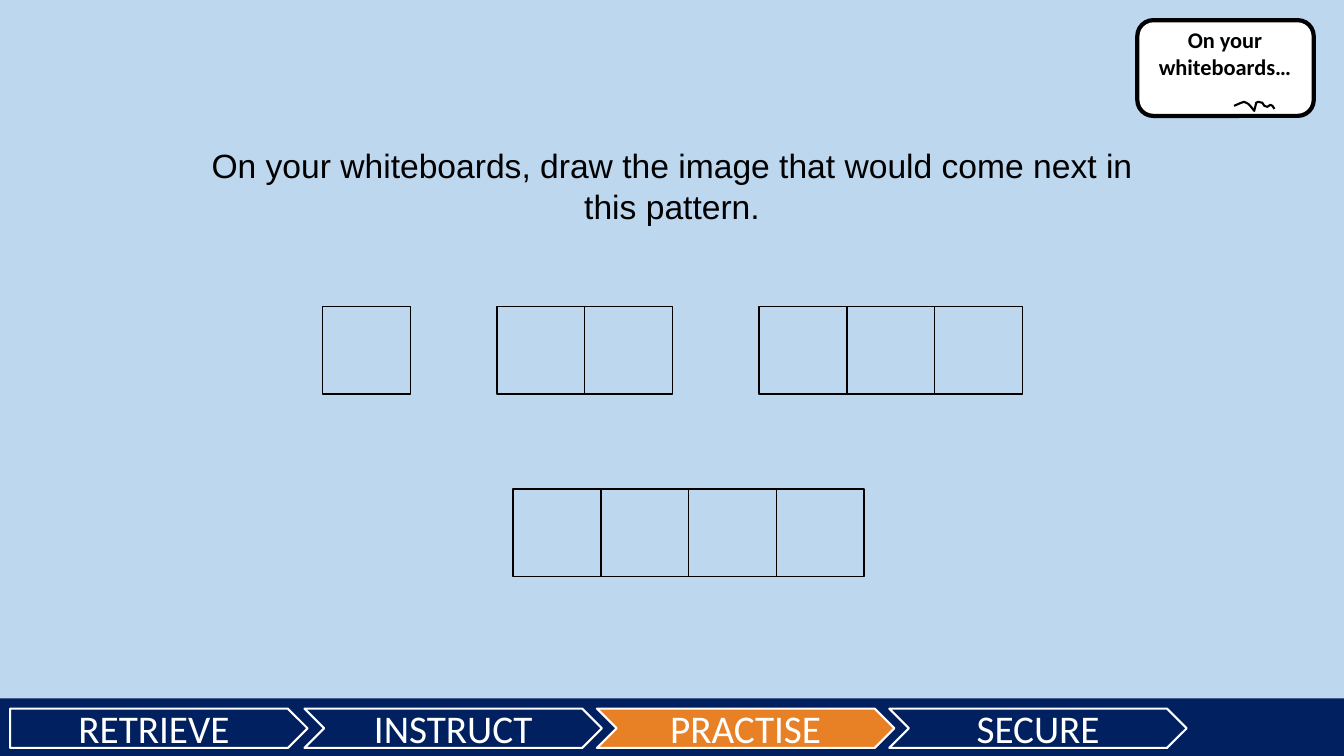
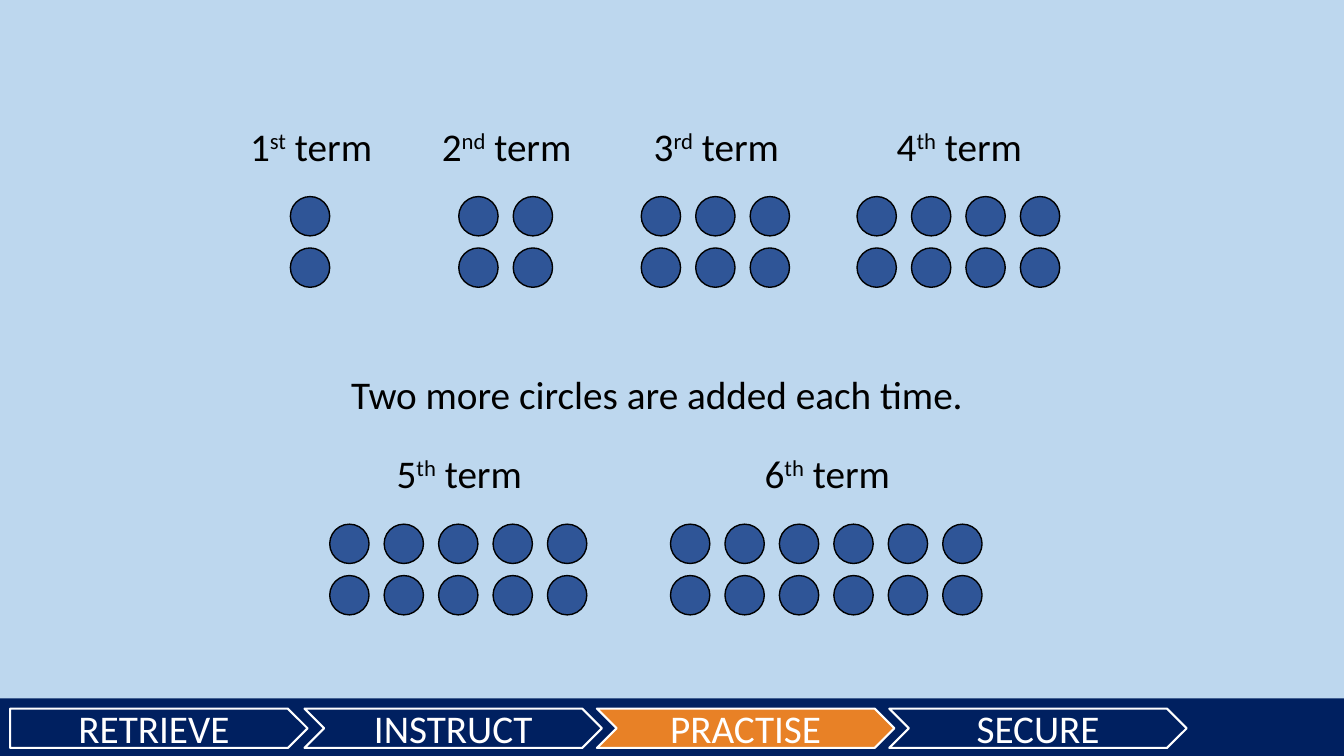
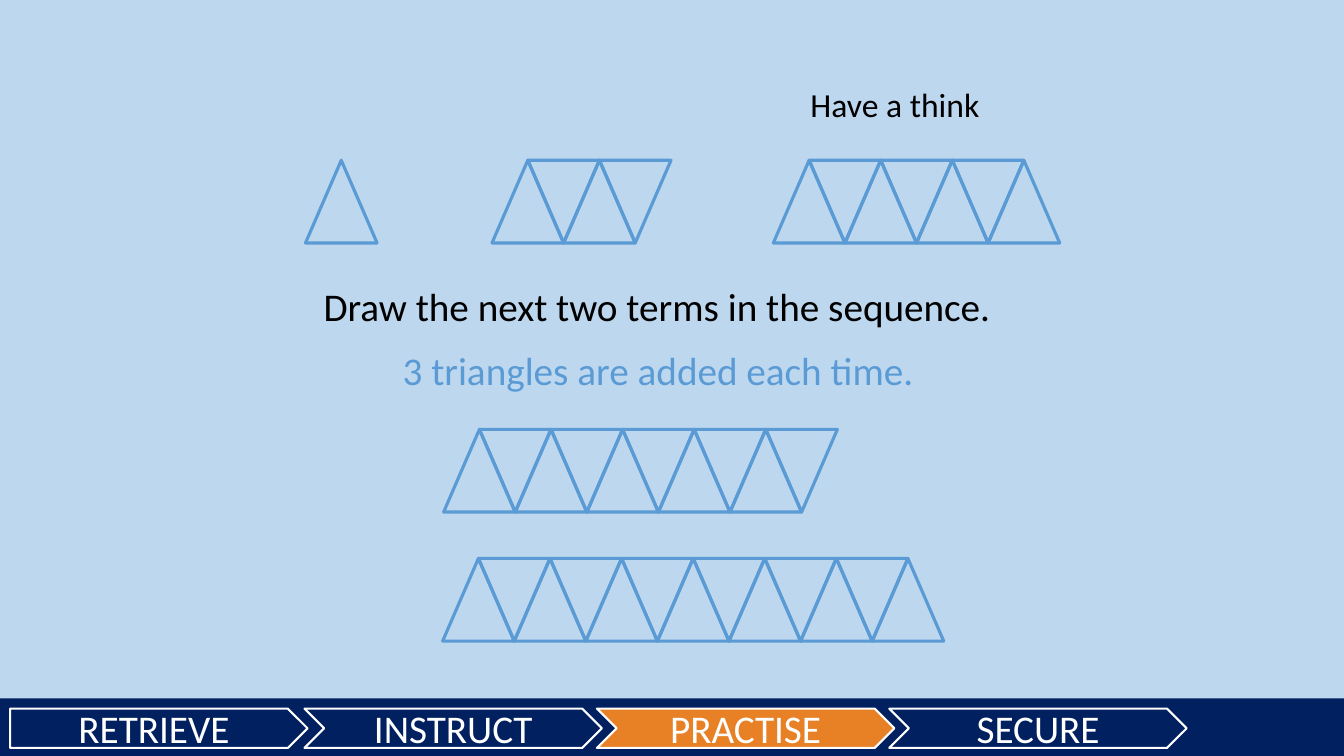
from pptx import Presentation
from pptx.dml.color import RGBColor
from pptx.enum.shapes import MSO_SHAPE as Preset
from pptx.enum.text import MSO_ANCHOR as Anchor, PP_ALIGN as Align
from pptx.util import Inches, Pt

COLOURS = {
    "sky": "BDD7EE",
    "navy": "002060",
    "orange": "E88126",
    "dot": "2F5597",
    "triangle": "5B9BD5",
    "white": "FFFFFF",
    "black": "000000",
}
FONT = "Calibri"
SLIDE_W, SLIDE_H = 13.33, 7.5
STAGES = ["RETRIEVE", "INSTRUCT", "PRACTISE", "SECURE"]
SQUARE = 0.87
DOT, DOT_STEP, DOT_ROW_STEP = 0.39, 0.54, 0.51
TRIANGLE_W, TRIANGLE_H = 0.71, 0.82


def colour(name):
    return RGBColor.from_string(COLOURS[name])


def paint(shape, fill=None, line=None, width=1):
    shape.shadow.inherit = False
    if fill:
        shape.fill.solid()
        shape.fill.fore_color.rgb = colour(fill)
    else:
        shape.fill.background()
    if line:
        shape.line.color.rgb = colour(line)
        shape.line.width = Pt(width)
    else:
        shape.line.fill.background()


def add_preset(parent, preset, box, **look):
    shape = parent.shapes.add_shape(preset, *map(Inches, box))
    paint(shape, **look)
    return shape


def style_runs(paragraph, size, ink="black", font=FONT, bold=False, align=Align.CENTER):
    paragraph.alignment = align
    for run in paragraph.runs:
        run.font.name = font
        run.font.size = Pt(size)
        run.font.bold = bold
        run.font.color.rgb = colour(ink)


def add_text(parent, box, words, size=28, **look):
    frame = parent.shapes.add_textbox(*map(Inches, box)).text_frame
    frame.word_wrap = True
    frame.text = words
    style_runs(frame.paragraphs[0], size, **look)


# Shared stage bar along the bottom
def add_stage_bar(slide, current):
    top, height = 6.93, 0.57
    add_preset(slide, Preset.RECTANGLE, (0, top, SLIDE_W, height), fill="navy")
    for index, stage in enumerate(STAGES):
        arrow = add_preset(
            slide,
            Preset.CHEVRON if index else Preset.PENTAGON,
            (0.12 + 2.9 * index if index else 0.1, top + 0.1, 2.95, 0.39),
            fill="orange" if stage == current else "navy",
            line="white", width=1.5)
        frame = arrow.text_frame
        frame.text = stage
        frame.vertical_anchor = Anchor.MIDDLE
        style_runs(frame.paragraphs[0], 28, ink="white")


def new_slide(deck):
    slide = deck.slides.add_slide(deck.slide_layouts[6])
    add_stage_bar(slide, "PRACTISE")
    return slide


# Small whiteboard with a pen scribble
def add_whiteboard(slide, left, top):
    board = slide.shapes.add_group_shape()
    add_preset(board, Preset.ROUNDED_RECTANGLE, (left, top, 1.75, 0.95),
               fill="white", line="black", width=3)
    add_text(board, (left + 0.05, top + 0.01, 1.64, 0.64),
             "On your whiteboards…", size=16, bold=True)
    scribble = [(0.96, 0.85), (1.03, 0.82), (1.06, 0.81), (1.1, 0.83),
                (1.12, 0.85), (1.16, 0.9), (1.18, 0.82), (1.2, 0.81),
                (1.24, 0.82), (1.26, 0.85), (1.29, 0.86), (1.32, 0.84),
                (1.34, 0.85), (1.36, 0.88)]
    points = [(Inches(left + x), Inches(top + y)) for x, y in scribble]
    pen = board.shapes.build_freeform(*points[0])
    pen.add_line_segments(points[1:], close=False)
    paint(pen.convert_to_shape(), line="black", width=1.5)


# Pattern terms
def add_squares(slide, left, top, count):
    for index in range(count):
        add_preset(slide, Preset.RECTANGLE,
                   (left + index * SQUARE, top, SQUARE, SQUARE), line="black")


def add_triangles(slide, left, top, count):
    for index in range(count):
        triangle = add_preset(
            slide, Preset.ISOSCELES_TRIANGLE,
            (left + index * TRIANGLE_W / 2, top, TRIANGLE_W, TRIANGLE_H),
            line="triangle", width=2.25)
        triangle.rotation = 180 * (index % 2)


def add_dot_term(slide, left, top, number, suffix):
    """Ordinal label above two rows of dots, centred on them."""
    centre = left + ((number - 1) * DOT_STEP + DOT) / 2
    label = slide.shapes.add_textbox(
        *map(Inches, (centre - 0.74, top, 1.5, 0.57))).text_frame
    label.word_wrap = False
    ordinal = label.paragraphs[0]
    for part in (str(number), suffix, " term"):
        ordinal.add_run().text = part
    style_runs(ordinal, 28)
    ordinal.runs[1]._r.get_or_add_rPr().set("baseline", "30000")
    for column in range(number):
        for row in range(2):
            add_preset(slide, Preset.OVAL,
                       (left + column * DOT_STEP,
                        top + 0.79 + row * DOT_ROW_STEP, DOT, DOT),
                       fill="dot", line="black")


# Slides
def build_squares_slide(deck):
    slide = new_slide(deck)
    add_whiteboard(slide, 11.28, 0.2)
    add_text(slide, (1.94, 1.39, 9.45, 0.91),
             "On your whiteboards, draw the image that would come next in "
             "this pattern.", size=24, font="Arial")
    for left, top, count in [(3.2, 3.04, 1), (4.93, 3.04, 2),
                             (7.53, 3.04, 3), (5.09, 4.85, 4)]:
        add_squares(slide, left, top, count)


def build_circles_slide(deck):
    slide = new_slide(deck)
    suffixes = ["st", "nd", "rd", "th", "th", "th"]
    places = [(2.88, 1.16), (4.55, 1.16), (6.36, 1.16), (8.5, 1.16),
              (3.27, 4.41), (6.65, 4.41)]
    for number, (suffix, (left, top)) in enumerate(zip(suffixes, places), 1):
        add_dot_term(slide, left, top, number, suffix)
    add_text(slide, (2.4, 3.62, 8.23, 0.57),
             "Two more circles are added each time.")


def build_triangles_slide(deck):
    slide = new_slide(deck)
    add_text(slide, (7.94, 0.78, 2.29, 0.5), "Have a think",
             size=24, align=Align.LEFT)
    places = [(3.03, 1.59), (4.88, 1.59), (7.67, 1.59), (4.4, 4.26), (4.39, 5.54)]
    for index, (left, top) in enumerate(places):
        add_triangles(slide, left, top, 1 + 3 * index)
    add_text(slide, (2.4, 2.75, 8.23, 0.57),
             "Draw the next two terms in the sequence.")
    add_text(slide, (2.41, 3.39, 8.23, 0.57),
             "3 triangles are added each time.", ink="triangle")


def main():
    deck = Presentation()
    deck.slide_width, deck.slide_height = Inches(SLIDE_W), Inches(SLIDE_H)
    backdrop = deck.slide_master.background.fill
    backdrop.solid()
    backdrop.fore_color.rgb = colour("sky")
    build_squares_slide(deck)
    build_circles_slide(deck)
    build_triangles_slide(deck)
    deck.save("out.pptx")


if __name__ == "__main__":
    main()
